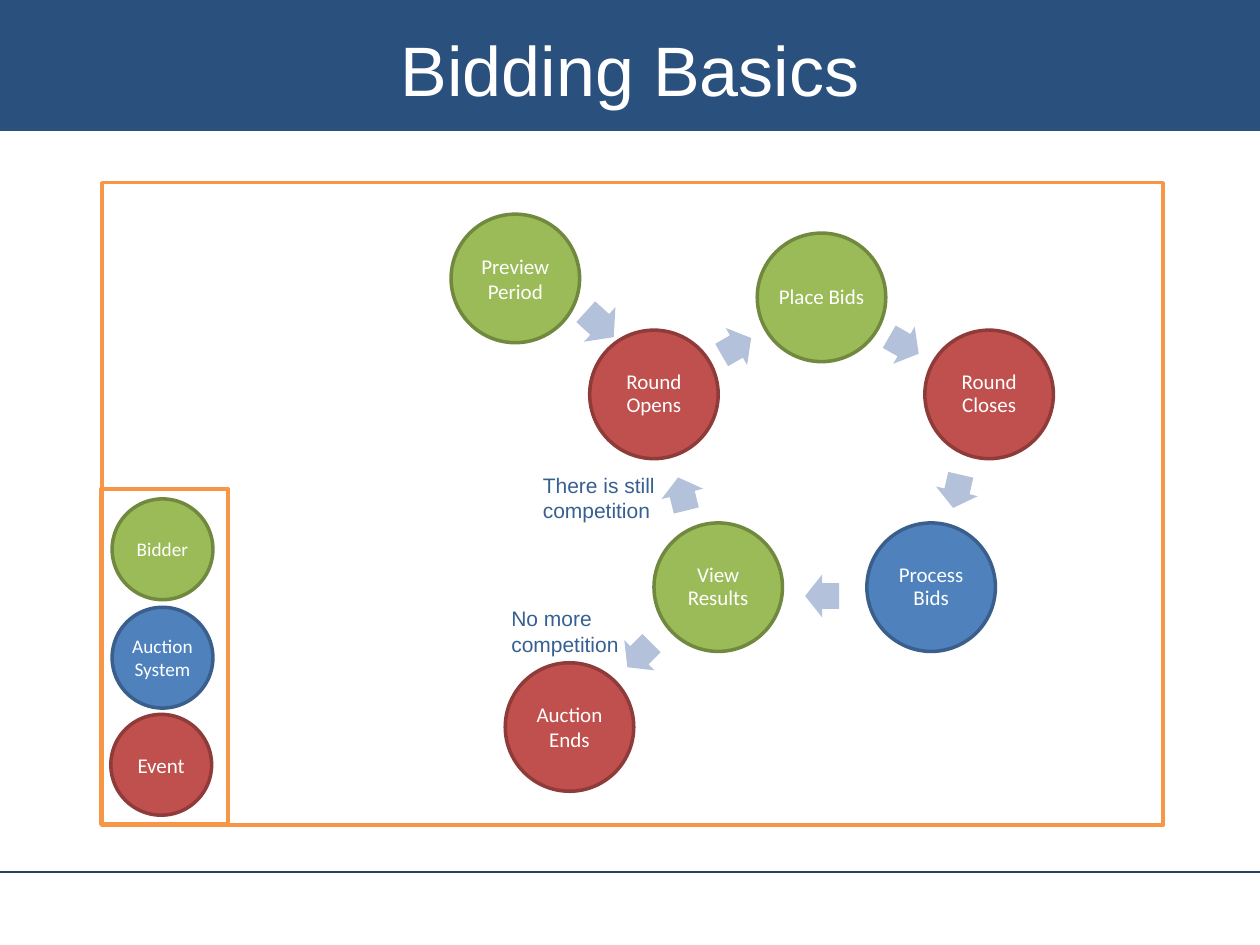
from pptx import Presentation
from pptx.dml.color import RGBColor
from pptx.enum.shapes import MSO_CONNECTOR, MSO_SHAPE
from pptx.enum.text import MSO_ANCHOR, PP_ALIGN
from pptx.oxml.ns import qn
from pptx.util import Inches, Pt
from lxml import etree

RECTANGLE, OVAL, ARROW = MSO_SHAPE.RECTANGLE, MSO_SHAPE.OVAL, MSO_SHAPE.RIGHT_ARROW
STRAIGHT = MSO_CONNECTOR.STRAIGHT
MIDDLE, CENTER = MSO_ANCHOR.MIDDLE, PP_ALIGN.CENTER

BIDDER = ("9BBB59", "71893F")
SYSTEM = ("4F81BD", "3A5F8C")
EVENT = ("C0504D", "8E3B39")


def add_box(kind, left, top, width, height, fill=None, line=None):
    box = slide.shapes.add_shape(
        kind, Inches(left), Inches(top), Inches(width), Inches(height))
    box.shadow.inherit = False
    if fill:
        box.fill.solid()
        box.fill.fore_color.rgb = RGBColor.from_string(fill)
    else:
        box.fill.background()
    if line:
        box.line.color.rgb = RGBColor.from_string(line)
        box.line.width = Pt(2)
    else:
        box.line.fill.background()
    return box


def write(shape, text, size, font, color, align=None, spacing=None):
    """Fill the shape's first paragraph; a newline becomes a line break."""
    frame = shape.text_frame
    frame.word_wrap = True
    paragraph = frame.paragraphs[0]
    paragraph.alignment = align
    paragraph.line_spacing = spacing
    for i, words in enumerate(text.split("\n")):
        if i:
            paragraph.add_line_break()
        run = paragraph.add_run()
        run.text = words
        run.font.size = Pt(size)
        run.font.name = font
        run.font.color.rgb = RGBColor.from_string(color)
    return frame


prs = Presentation()
prs.slide_width, prs.slide_height = Inches(10), Inches(7.5)
slide = prs.slides.add_slide(prs.slide_layouts[6])

# Header, footer rule and diagram frame
add_box(RECTANGLE, 0, 0, 10, 1.04, "2A507E")
footer_rule = slide.shapes.add_connector(
    STRAIGHT, Inches(0), Inches(6.92), Inches(10), Inches(6.92))
footer_rule.line.color.rgb = RGBColor.from_string("254061")
footer_rule.line.width = Pt(1.5)
etree.SubElement(footer_rule._element.spPr, qn("a:effectLst"))
add_box(RECTANGLE, 0.81, 1.45, 8.42, 5.1, "FFFFFF", "F79646")
title = slide.shapes.add_textbox(Inches(0.5), Inches(0.08), Inches(9), Inches(0.92))
write(title, "Bidding Basics", 40, "Arial", "FFFFFF", CENTER).vertical_anchor = MIDDLE

# Arrows: left, top, width, height, rotation
arrows = [
    (4.61, 2.39, 0.3, 0.37, 42.3),
    (5.71, 2.58, 0.27, 0.34, 330),
    (7.04, 2.57, 0.27, 0.34, 30),
    (7.46, 3.73, 0.27, 0.34, 103),
    (6.39, 4.56, 0.27, 0.34, 180),
    (5.28, 3.75, 0.27, 0.34, 256),
    (4.94, 5.03, 0.27, 0.34, 135),
]
for left, top, width, height, rotation in arrows:
    arrow = add_box(ARROW, left, top, width, height, "B3C1DB")
    arrow.adjustments[0], arrow.adjustments[1] = 0.6, 0.5
    arrow.rotation = rotation

# Legend frame, then steps and legend keys:
# label, role, left, top, diameter, text size, line spacing
add_box(RECTANGLE, 0.8, 3.88, 1.01, 2.66, line="F79646")
circles = [
    ("Preview Period", BIDDER, 3.58, 1.7, 1.02, 12, None),
    ("Round Opens", EVENT, 4.68, 2.62, 1.02, 12, 0.9),
    ("Place Bids", BIDDER, 6.01, 1.85, 1.02, 12, 0.9),
    ("Round Closes", EVENT, 7.34, 2.62, 1.02, 12, 0.9),
    ("Process Bids", SYSTEM, 6.88, 4.15, 1.02, 12, 0.9),
    ("View Results", BIDDER, 5.19, 4.15, 1.02, 12, 0.9),
    ("Auction\nEnds", EVENT, 4.01, 5.26, 1.02, 12, None),
    ("Bidder", BIDDER, 0.89, 3.96, 0.8, 11, None),
    ("Auction System", SYSTEM, 0.89, 4.82, 0.8, 11, None),
    ("Event", EVENT, 0.88, 5.67, 0.8, 12, None),
]
for label, (fill, line), left, top, diameter, size, spacing in circles:
    circle = add_box(OVAL, left, top, diameter, diameter, fill, line)
    frame = write(circle, label, size, "Calibri", "FFFFFF", CENTER, spacing)
    frame.vertical_anchor = MIDDLE
    frame.margin_left = frame.margin_right = 0

# Conditions beside the arrows
conditions = [
    ("There is still competition", 4.21, 3.7, 1.45),
    ("No more competition", 3.96, 4.76, 1.38),
]
for condition, left, top, width in conditions:
    note = slide.shapes.add_textbox(
        Inches(left), Inches(top), Inches(width), Inches(0.5))
    write(note, condition, 12, "Arial", "376092")

prs.save("out.pptx")
